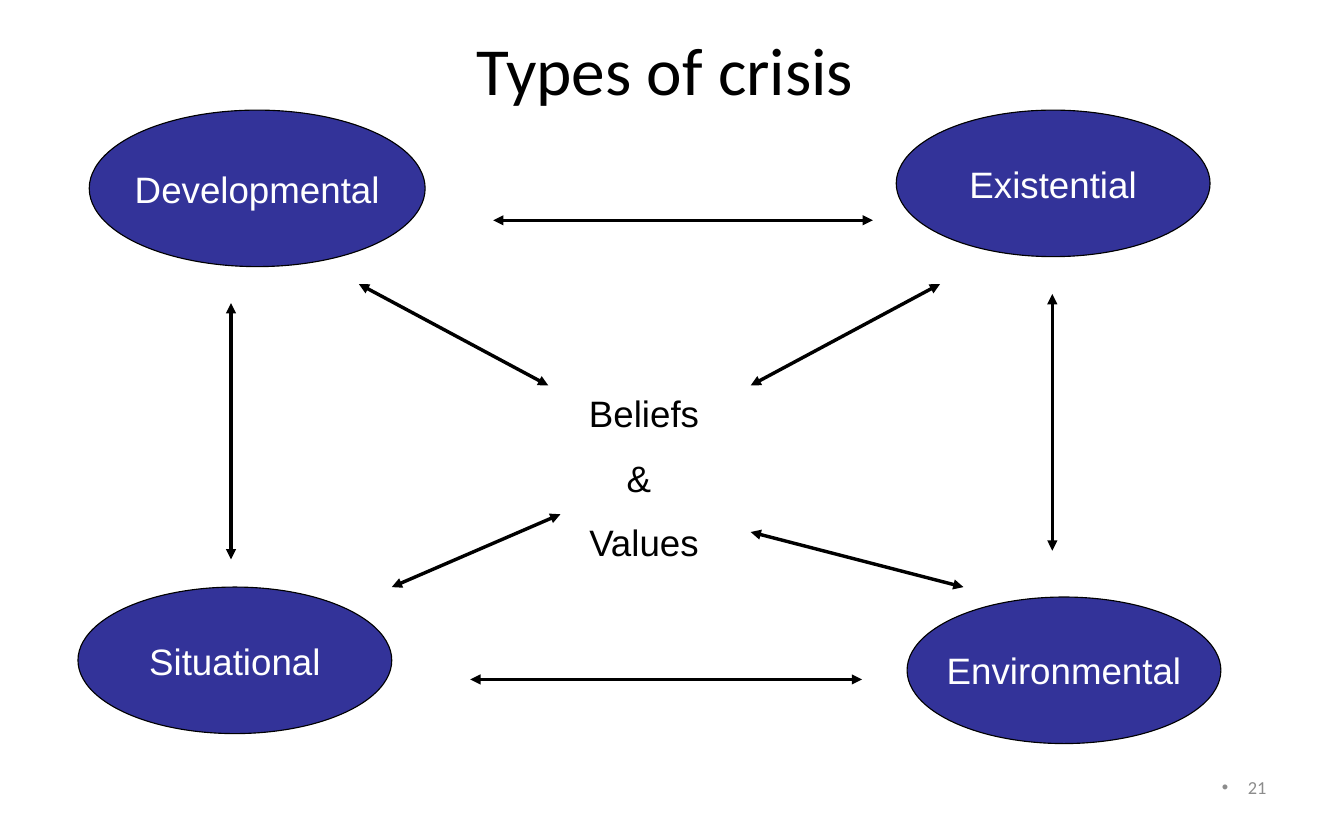
from lxml.etree import SubElement
from pptx import Presentation
from pptx.dml.color import RGBColor
from pptx.enum.shapes import MSO_CONNECTOR, MSO_SHAPE
from pptx.enum.text import MSO_ANCHOR, PP_ALIGN
from pptx.oxml.ns import qn
from pptx.util import Cm, Pt

BLACK = RGBColor(0x00, 0x00, 0x00)
WHITE = RGBColor(0xFF, 0xFF, 0xFF)
NAVY = RGBColor(0x33, 0x33, 0x99)
GRAY = RGBColor(0x8C, 0x8C, 0x8C)

# Left, top, width, height in cm
CRISES = [
    ("Existential", 20.68, 2.54, 7.24, 3.38),
    ("Developmental", 2.06, 2.54, 7.75, 3.61),
    ("Situational", 1.8, 13.54, 7.24, 3.38),
    ("Environmental", 20.93, 13.77, 7.24, 3.38),
]

# Start x, y and end x, y in cm
LINKS = [
    # Between neighbouring crises
    (11.38, 5.08, 20.14, 5.08),
    (24.28, 6.78, 24.28, 12.7),
    (10.85, 15.67, 19.89, 15.67),
    (5.33, 6.99, 5.33, 12.9),
    # Between the centre and each crisis
    (12.93, 11.86, 9.04, 13.54),
    (8.28, 6.55, 12.65, 8.89),
    (21.69, 6.55, 17.32, 8.89),
    (17.32, 12.27, 22.23, 13.54),
]


def write(paragraph, text, font, size, color, align=PP_ALIGN.CENTER):
    paragraph.alignment = align
    run = paragraph.add_run()
    run.text = text
    run.font.name = font
    run.font.size = Pt(size)
    run.font.color.rgb = color


def add_text_frame(slide, box, anchor):
    frame = slide.shapes.add_textbox(*map(Cm, box)).text_frame
    frame.word_wrap = True
    frame.vertical_anchor = anchor
    return frame


def add_crisis(slide, name, *box):
    ellipse = slide.shapes.add_shape(MSO_SHAPE.OVAL, *map(Cm, box))
    ellipse.shadow.inherit = False
    ellipse.fill.solid()
    ellipse.fill.fore_color.rgb = NAVY
    ellipse.line.color.rgb = BLACK
    ellipse.line.width = Pt(0.75)
    frame = ellipse.text_frame
    frame.word_wrap = False
    frame.vertical_anchor = MSO_ANCHOR.MIDDLE
    write(frame.paragraphs[0], name, "Arial", 24, WHITE)


def add_link(slide, *ends):
    link = slide.shapes.add_connector(MSO_CONNECTOR.STRAIGHT, *map(Cm, ends))
    link.line.color.rgb = BLACK
    link.line.width = Pt(2.25)
    outline = link.line._get_or_add_ln()
    for end in ("a:headEnd", "a:tailEnd"):
        SubElement(outline, qn(end), type="triangle")
    SubElement(link._element.spPr, qn("a:effectLst"))


def add_beliefs(slide):
    frame = add_text_frame(slide, (12.14, 8.89, 5.44, 4.37), MSO_ANCHOR.TOP)
    for index, text in enumerate(("Beliefs", "& ", "Values")):
        paragraph = frame.add_paragraph() if index else frame.paragraphs[0]
        if index:
            paragraph.space_before = Pt(13.5)
        write(paragraph, text, "Arial", 24, BLACK)


def add_page_number(slide):
    frame = add_text_frame(slide, (22.23, 17.65, 7.24, 1.02), MSO_ANCHOR.MIDDLE)
    paragraph = frame.paragraphs[0]
    properties = paragraph._p.get_or_add_pPr()
    properties.set("marL", str(Cm(0.6)))
    properties.set("indent", str(-Cm(0.6)))
    SubElement(properties, qn("a:buFont"), typeface="Arial")
    SubElement(properties, qn("a:buChar"), char="•")
    write(paragraph, "21", "Calibri", 12, GRAY, PP_ALIGN.RIGHT)


def main():
    deck = Presentation()
    deck.slide_width, deck.slide_height = Cm(31.01), Cm(19.05)
    slide = deck.slides.add_slide(deck.slide_layouts[6])

    # Title
    title = add_text_frame(slide, (2.34, 0, 26.37, 3.18), MSO_ANCHOR.MIDDLE)
    write(title.paragraphs[0], "Types of crisis ", "Calibri", 44, BLACK)

    # Arrows, centre and crises
    for link in LINKS:
        add_link(slide, *link)
    add_beliefs(slide)
    for crisis in CRISES:
        add_crisis(slide, *crisis)

    # Footer
    add_page_number(slide)
    deck.save("out.pptx")


if __name__ == "__main__":
    main()
